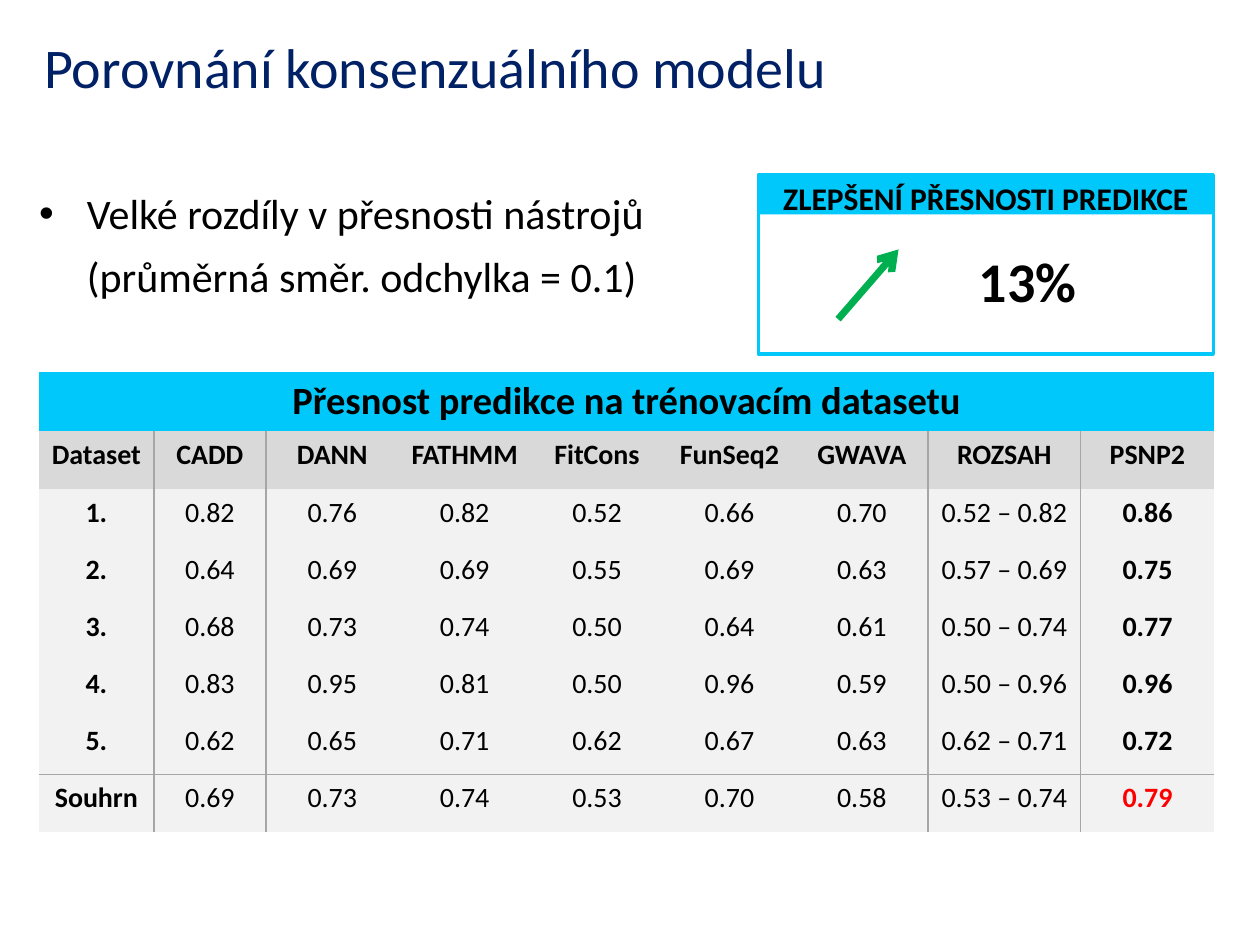
from dataclasses import dataclass

from lxml import etree
from pptx import Presentation
from pptx.dml.color import RGBColor
from pptx.enum.shapes import MSO_CONNECTOR, MSO_SHAPE
from pptx.enum.text import MSO_ANCHOR, PP_ALIGN
from pptx.oxml.ns import qn
from pptx.util import Inches, Pt

STRAIGHT = MSO_CONNECTOR.STRAIGHT
RECTANGLE = MSO_SHAPE.RECTANGLE
TOP, MIDDLE, BOTTOM = MSO_ANCHOR.TOP, MSO_ANCHOR.MIDDLE, MSO_ANCHOR.BOTTOM
LEFT, CENTER = PP_ALIGN.LEFT, PP_ALIGN.CENTER
PLAIN_TABLE_STYLE = "{2D5ABB26-0587-4C30-8999-92F81FD0307C}"


@dataclass(frozen=True)
class Theme:
    font: str = "Calibri"
    ink: str = "000000"
    title: str = "012167"
    accent: str = "00C8FA"
    rise: str = "00B050"
    best: str = "FF0000"
    heading_fill: str = "D9D9D9"
    body_fill: str = "F2F2F2"
    rule: str = "A6A6A6"
    big: int = 32
    bullet: int = 24
    caption: int = 22
    label: int = 18
    cell: int = 16


@dataclass(frozen=True)
class Box:
    left: float
    top: float
    width: float
    height: float

    def share(self, x, y, width, height):
        """Return the box that takes the given shares of this one."""
        return Box(self.left + x * self.width, self.top + y * self.height,
                   width * self.width, height * self.height)

    def emu(self):
        return [Inches(n) for n in (self.left, self.top, self.width, self.height)]


THEME = Theme()
SLIDE = Box(0, 0, 10, 7.5)
TITLE = Box(0.35, 0.2, 8.3, 0.59)
FINDING = Box(0.31, 1.39, 5.32, 1.34)
CALLOUT = Box(6.02, 1.39, 3.61, 1.42)
TABLE = Box(0.31, 2.95, 9.33, 3.65)

CAPTION = "Přesnost predikce na trénovacím datasetu"
COLUMN_WIDTHS = [0.91, 0.89] + [1.05] * 5 + [1.21, 1.06]
TOP_ROWS = [0.47, 0.46]
RULED_COLUMNS = (0, 6, 7)  # columns with a rule on their right
HEADINGS = ["Dataset", "CADD", "DANN", "FATHMM", "FitCons", "FunSeq2", "GWAVA",
            "ROZSAH", "PSNP2"]
RESULTS = [
    ["1.", "0.82", "0.76", "0.82", "0.52", "0.66", "0.70", "0.52 – 0.82", "0.86"],
    ["2.", "0.64", "0.69", "0.69", "0.55", "0.69", "0.63", "0.57 – 0.69", "0.75"],
    ["3.", "0.68", "0.73", "0.74", "0.50", "0.64", "0.61", "0.50 – 0.74", "0.77"],
    ["4.", "0.83", "0.95", "0.81", "0.50", "0.96", "0.59", "0.50 – 0.96", "0.96"],
    ["5.", "0.62", "0.65", "0.71", "0.62", "0.67", "0.63", "0.62 – 0.71", "0.72"],
    ["Souhrn", "0.69", "0.73", "0.74", "0.53", "0.70", "0.58", "0.53 – 0.74", "0.79"],
]


def set_all(target, values):
    for name, value in values.items():
        setattr(target, name, value)


def write(frame, text, size, color=THEME.ink, bold=False, align=LEFT, spacing=None):
    """Write one paragraph, with a vertical tab as its line break."""
    paragraph = frame.paragraphs[0]
    paragraph.text = text
    set_all(paragraph, {"alignment": align, "line_spacing": spacing})
    for run in paragraph.runs:
        set_all(run.font, {"name": THEME.font, "size": Pt(size), "bold": bold})
        run.font.color.rgb = RGBColor.from_string(color)
    return paragraph


def set_frame(frame, anchor=TOP, wrap=True):
    set_all(frame, {"margin_left": 0, "margin_right": 0, "margin_top": 0,
                    "margin_bottom": 0, "vertical_anchor": anchor, "word_wrap": wrap})
    return frame


def add_text(slide, box, anchor=TOP, wrap=True):
    return set_frame(slide.shapes.add_textbox(*box.emu()).text_frame, anchor, wrap)


def add_rectangle(slide, box, fill=None, line=None):
    shape = slide.shapes.add_shape(RECTANGLE, *box.emu())
    shape.shadow.inherit = False
    for paint, color in ((shape.fill, fill), (shape.line.fill, line)):
        if color:
            paint.solid()
            paint.fore_color.rgb = RGBColor.from_string(color)
        else:
            paint.background()
    return shape


def add_title(slide, box):
    write(add_text(slide, box, BOTTOM), "Porovnání konsenzuálního modelu",
          THEME.big, THEME.title)


def add_finding(slide, box):
    paragraph = write(add_text(slide, box),
                      "Velké rozdíly v přesnosti nástrojů\v(průměrná směr. odchylka = 0.1)",
                      THEME.bullet, spacing=1.25)
    properties = paragraph._p.get_or_add_pPr()
    properties.set("marL", str(Inches(0.38)))
    properties.set("indent", str(-Inches(0.38)))
    etree.SubElement(properties, qn("a:buFont")).set("typeface", "Arial")
    etree.SubElement(properties, qn("a:buChar")).set("char", "•")


def add_callout(slide, box):
    # Heading band and frame
    band = add_rectangle(slide, box.share(0, 0, 1, 0.22), fill=THEME.accent)
    write(set_frame(band.text_frame), "ZLEPŠENÍ PŘESNOSTI PREDIKCE", THEME.label,
          bold=True, align=CENTER, spacing=1.1)
    add_rectangle(slide, box, line=THEME.accent).line.width = Pt(2)

    # Rising arrow
    left, top, width, height = box.share(0.175, 0.415, 0.133, 0.39).emu()
    arrow = slide.shapes.add_connector(STRAIGHT, left, top + height, left + width, top)
    arrow.line.width = Pt(4)
    arrow.line.color.rgb = RGBColor.from_string(THEME.rise)
    etree.SubElement(arrow.line._get_or_add_ln(), qn("a:tailEnd")).set("type", "arrow")
    etree.SubElement(arrow._element.spPr, qn("a:effectLst"))

    # Improvement figure
    write(add_text(slide, box.share(0.455, 0.36, 0.274, 0.45), MIDDLE, wrap=False),
          "13%", THEME.big, bold=True, align=CENTER)


def add_borders(cell, sides):
    properties = cell._tc.get_or_add_tcPr()
    for position, side in enumerate(sides):
        line = etree.Element(qn(f"a:ln{side}"), w=str(Pt(1)))
        fill = etree.SubElement(line, qn("a:solidFill"))
        etree.SubElement(fill, qn("a:srgbClr")).set("val", THEME.rule)
        properties.insert(position, line)


def fill_cell(cell, text, fill, size=THEME.cell, color=THEME.ink, bold=False):
    set_all(cell, {"margin_left": Inches(0.05), "margin_right": Inches(0.05),
                   "vertical_anchor": TOP})
    cell.fill.solid()
    cell.fill.fore_color.rgb = RGBColor.from_string(fill)
    write(cell.text_frame, text, size, color, bold, CENTER)


def add_accuracy_table(slide, box):
    rows = [HEADINGS] + RESULTS
    last_row, last_column = len(rows), len(HEADINGS) - 1
    table = slide.shapes.add_table(last_row + 1, last_column + 1, *box.emu()).table
    set_all(table, {"first_row": False, "horz_banding": False})
    table._tbl.tblPr.find(qn("a:tableStyleId")).text = PLAIN_TABLE_STYLE

    # Grid
    scale = box.width / sum(COLUMN_WIDTHS)
    for column, width in zip(table.columns, COLUMN_WIDTHS):
        column.width = Inches(width * scale)
    result_height = (box.height - sum(TOP_ROWS)) / len(RESULTS)
    for row, height in zip(table.rows, TOP_ROWS + [result_height] * len(RESULTS)):
        row.height = Inches(height)

    # Caption across all columns
    table.cell(0, 0).merge(table.cell(0, last_column))
    fill_cell(table.cell(0, 0), CAPTION, THEME.accent, THEME.caption, bold=True)

    # Headings and results
    for r, texts in enumerate(rows, start=1):
        for c, text in enumerate(texts):
            cell = table.cell(r, c)
            is_best = (r, c) == (last_row, last_column)
            fill_cell(cell, text, THEME.heading_fill if r == 1 else THEME.body_fill,
                      color=THEME.best if is_best else THEME.ink,
                      bold=r == 1 or c in (0, last_column))
            rules = {"L": c - 1 in RULED_COLUMNS, "R": c in RULED_COLUMNS,
                     "T": r == last_row, "B": r == last_row - 1}
            add_borders(cell, [side for side, shown in rules.items() if shown])


def main():
    presentation = Presentation()
    presentation.slide_width = Inches(SLIDE.width)
    presentation.slide_height = Inches(SLIDE.height)
    slide = presentation.slides.add_slide(presentation.slide_layouts[6])
    add_accuracy_table(slide, TABLE)
    add_finding(slide, FINDING)
    add_callout(slide, CALLOUT)
    add_title(slide, TITLE)
    presentation.save("out.pptx")


if __name__ == "__main__":
    main()
